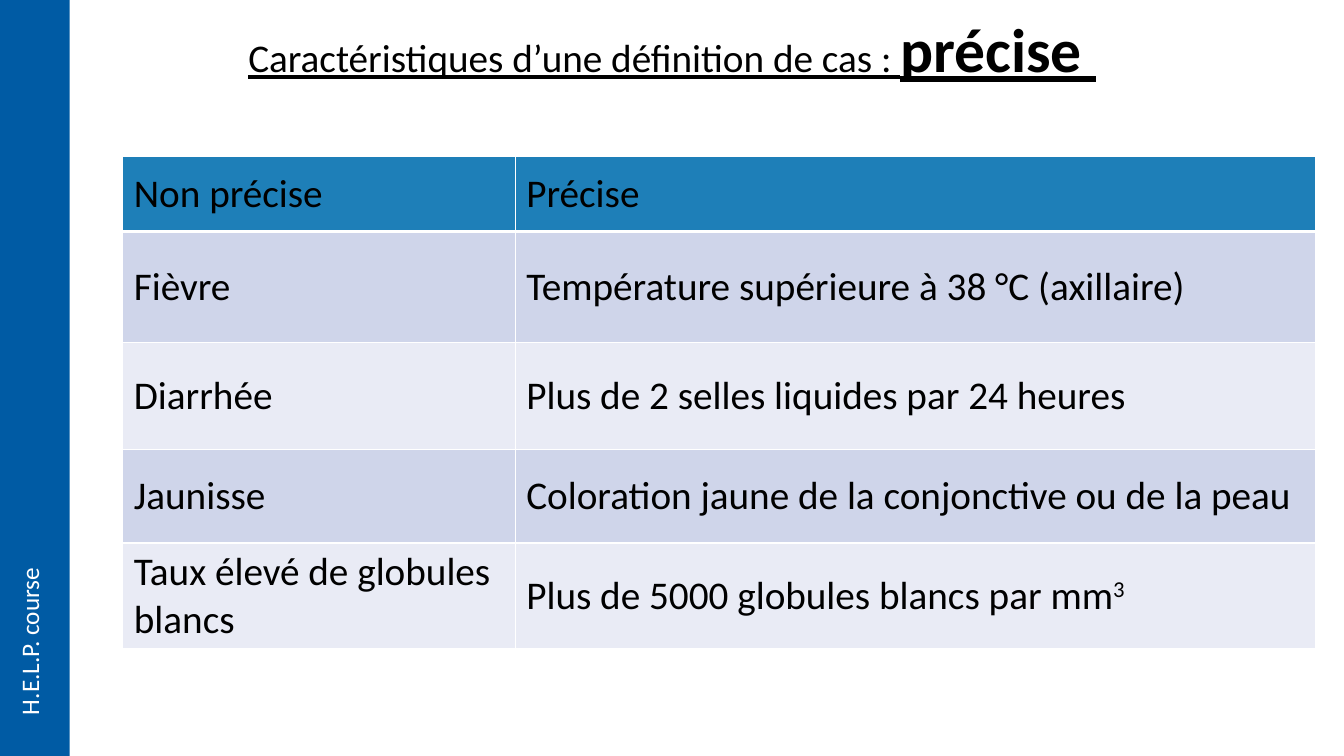
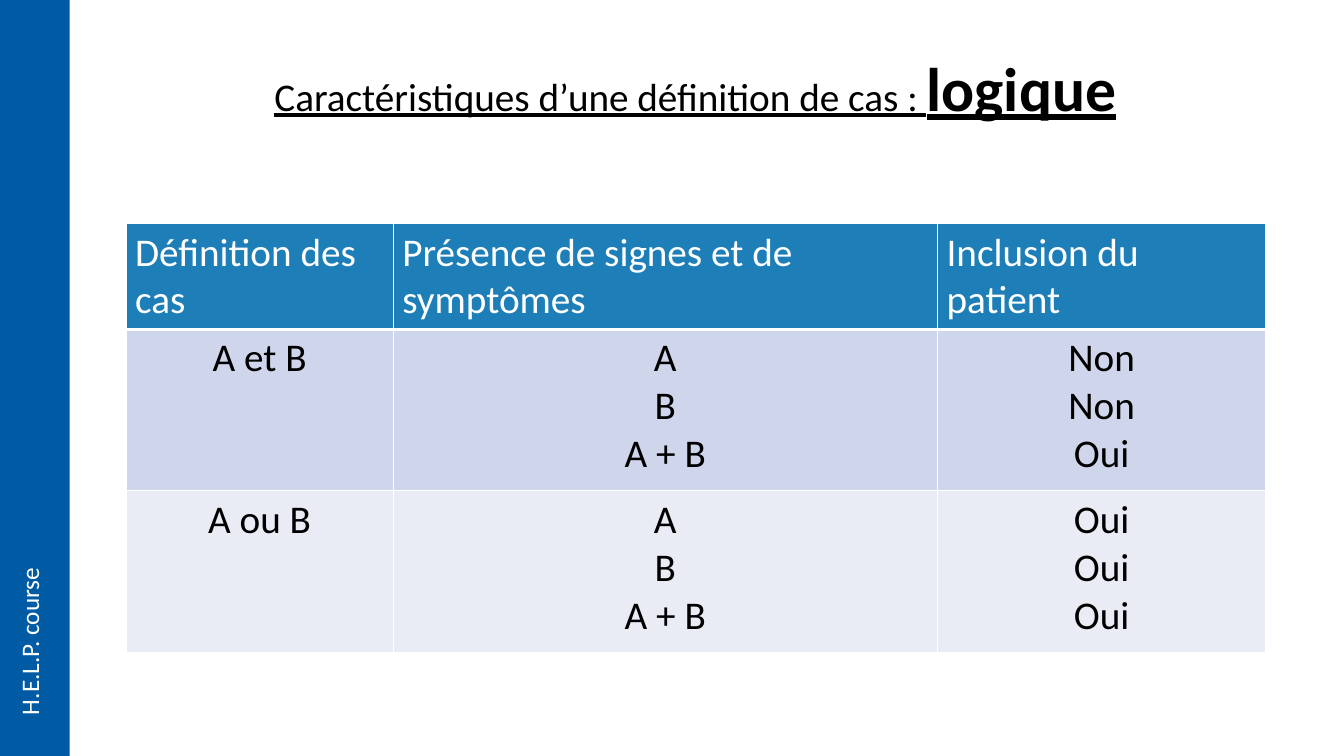
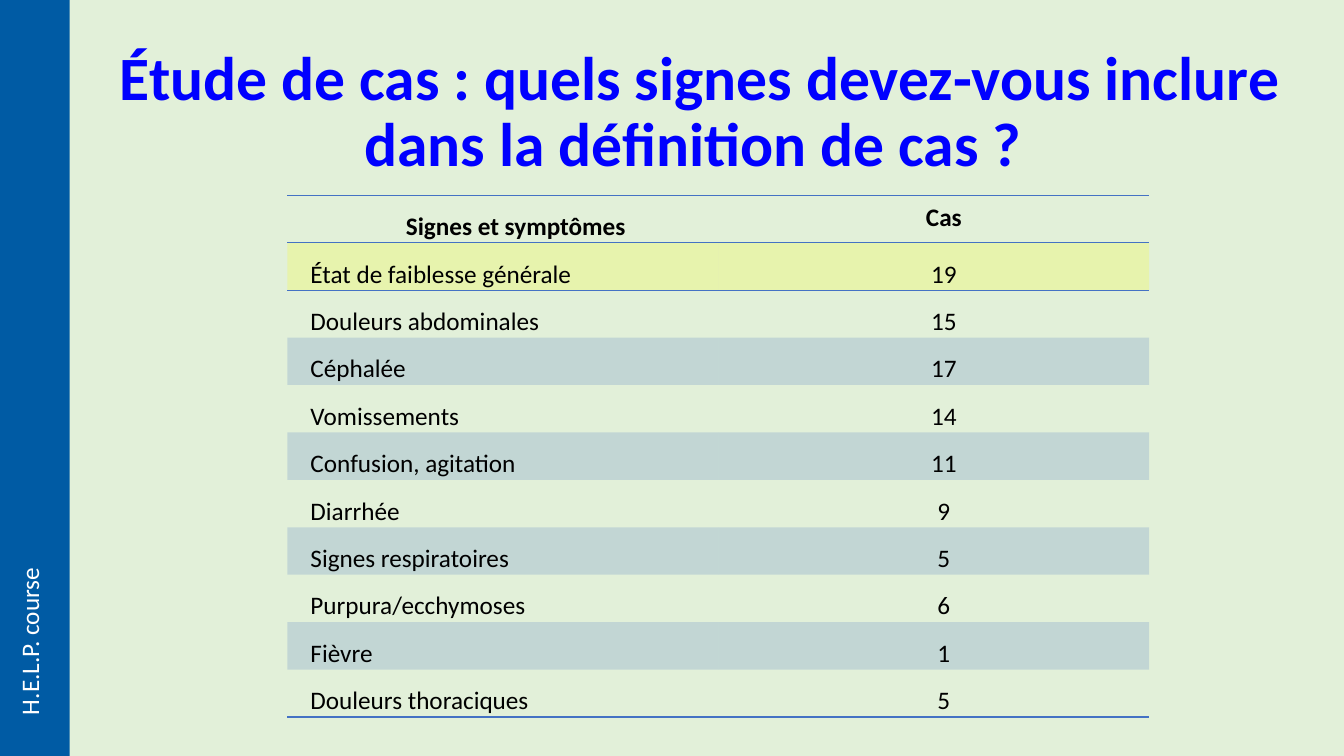
from dataclasses import dataclass, replace
from typing import NamedTuple, Optional

from lxml import etree
from pptx import Presentation
from pptx.dml.color import RGBColor
from pptx.enum import shapes, text
from pptx.oxml import ns
from pptx.util import Pt

# Shared look
FONT = "Calibri"
BLACK = RGBColor(0x00, 0x00, 0x00)
WHITE = RGBColor(0xFF, 0xFF, 0xFF)
BAND_BLUE = RGBColor(0x00, 0x5B, 0xA4)
HEADER_BLUE = RGBColor(0x1E, 0x7F, 0xB8)
ROW_DARK = RGBColor(0xCF, 0xD5, 0xEA)
ROW_LIGHT = RGBColor(0xE9, 0xEB, 0xF5)
PALE_GREEN = RGBColor(0xE2, 0xF0, 0xD9)
TITLE_BLUE = RGBColor(0x00, 0x00, 0xFF)
ACCENT = RGBColor(0x44, 0x72, 0xC4)
YELLOW = RGBColor(0xFF, 0xFF, 0x00)

SLIDE_W, SLIDE_H = 960, 540
BAND_W = 49.7
TITLE_H = 104.4
PLAIN_TABLE = "{2D5ABB26-0587-4C30-8999-92F81FD0307C}"
LEFT, CENTER = text.PP_ALIGN.LEFT, text.PP_ALIGN.CENTER
TOP, MIDDLE, BOTTOM = (text.MSO_ANCHOR.TOP, text.MSO_ANCHOR.MIDDLE,
                       text.MSO_ANCHOR.BOTTOM)


class TitlePart(NamedTuple):
    words: str
    size: float
    bold: bool


class Tint(NamedTuple):
    color: RGBColor
    opacity: int = 100


class Edge(NamedTuple):
    color: RGBColor
    width: float


@dataclass(frozen=True)
class CellStyle:
    size: float = 28
    color: RGBColor = BLACK
    bold: bool = False
    align: text.PP_ALIGN = LEFT
    anchor: text.MSO_ANCHOR = TOP
    insets: tuple[float, float, float, float] = (6.6, 3.6, 6.6, 3.6)
    spacing: float = 1
    indent: float = 0


@dataclass(frozen=True)
class TableSpec:
    left: float
    top: float
    widths: list[float]
    heights: list[float]
    rows: list[tuple[str, ...]]     # a line break starts a paragraph, ^ a superscript
    header: list[CellStyle]         # one style per column
    body: list[CellStyle]
    tints: list[Optional[Tint]]     # one per row
    gridded: bool = True


@dataclass(frozen=True)
class SlideSpec:
    title: list[TitlePart]
    title_left: float
    title_top: float
    title_width: float
    table: TableSpec
    title_color: RGBColor = BLACK
    underlined: bool = True
    background: RGBColor = WHITE


def brand_layout(slide, layout) -> None:
    """Build the side band and course label, then move them to the layout."""
    band = slide.shapes.add_shape(shapes.MSO_SHAPE.RECTANGLE,
                                  0, 0, Pt(BAND_W), Pt(SLIDE_H))
    band.shadow.inherit = False
    band.fill.solid()
    band.fill.fore_color.rgb = BAND_BLUE
    band.line.fill.background()

    course = slide.shapes.add_textbox(Pt(6.5), Pt(404), Pt(36), Pt(113.8))
    frame = course.text_frame
    frame.word_wrap = False
    frame.auto_size = text.MSO_AUTO_SIZE.SHAPE_TO_FIT_TEXT
    course.element.txBody.find(ns.qn("a:bodyPr")).set("vert", "vert270")
    label = frame.paragraphs[0]
    label.text = "H.E.L.P. course"
    label.font.name, label.font.size = FONT, Pt(18)
    label.font.color.rgb = WHITE

    for part in (band, course):
        layout.shapes.element.append(part.element)


def write_title(slide, spec: SlideSpec) -> None:
    title = slide.shapes.title
    title.left, title.top = Pt(spec.title_left), Pt(spec.title_top)
    title.width, title.height = Pt(spec.title_width), Pt(TITLE_H)
    frame = title.text_frame
    frame.word_wrap = True
    frame.auto_size = text.MSO_AUTO_SIZE.NONE
    frame.vertical_anchor = MIDDLE
    line = frame.paragraphs[0]
    line.alignment, line.line_spacing = CENTER, 0.9
    line.font.name, line.font.underline = FONT, spec.underlined
    line.font.color.rgb = spec.title_color
    for part in spec.title:
        run = line.add_run()
        run.text = part.words
        run.font.size, run.font.bold = Pt(part.size), part.bold


def cell_edges(spec: TableSpec, row: int) -> dict[str, Edge]:
    if spec.gridded:
        edges = {side: Edge(WHITE, 1) for side in "LRTB"}
        if row == 0:
            edges["B"] = Edge(WHITE, 3)
        return edges
    rule = Edge(ACCENT, 1)
    if row == 0:
        return {"T": rule, "B": rule}
    if row == 1:
        return {"T": rule}
    return {"B": rule} if row == len(spec.rows) - 1 else {}


def draw_edges(cell, edges: dict[str, Edge]) -> None:
    properties = cell._tc.get_or_add_tcPr()
    for side, edge in edges.items():
        line = etree.SubElement(properties, ns.qn(f"a:ln{side}"),
                                w=str(Pt(edge.width)))
        fill = etree.SubElement(line, ns.qn("a:solidFill"))
        etree.SubElement(fill, ns.qn("a:srgbClr"), val=str(edge.color))


def fill_cell(cell, tint: Optional[Tint]) -> None:
    if tint is None:
        cell.fill.background()
        return
    cell.fill.solid()
    cell.fill.fore_color.rgb = tint.color
    if tint.opacity < 100:
        color = cell._tc.tcPr.find(f"{ns.qn('a:solidFill')}/{ns.qn('a:srgbClr')}")
        etree.SubElement(color, ns.qn("a:alpha"), val=str(tint.opacity * 1000))


def write_cell(cell, words: str, style: CellStyle) -> None:
    (cell.margin_left, cell.margin_top,
     cell.margin_right, cell.margin_bottom) = map(Pt, style.insets)
    cell.vertical_anchor = style.anchor
    frame = cell.text_frame
    for index, line in enumerate(words.split("\n")):
        paragraph = frame.add_paragraph() if index else frame.paragraphs[0]
        paragraph.alignment = style.align
        paragraph.line_spacing = style.spacing
        if style.indent:
            paragraph._p.get_or_add_pPr().set("marL", str(Pt(style.indent)))
        font = paragraph.font
        font.name, font.size, font.bold = FONT, Pt(style.size), style.bold
        font.color.rgb = style.color
        base, _, exponent = line.partition("^")
        paragraph.add_run().text = base
        if exponent:
            raised = paragraph.add_run()
            raised.text = exponent
            raised._r.get_or_add_rPr().set("baseline", "30000")


def draw_table(slide, spec: TableSpec) -> None:
    frame = slide.shapes.add_table(
        len(spec.heights), len(spec.widths), Pt(spec.left), Pt(spec.top),
        Pt(sum(spec.widths)), Pt(sum(spec.heights)))
    table = frame.table
    table.first_row = table.horz_banding = False
    table._tbl.tblPr.find(ns.qn("a:tableStyleId")).text = PLAIN_TABLE
    for column, width in zip(table.columns, spec.widths):
        column.width = Pt(width)
    for row, height in zip(table.rows, spec.heights):
        row.height = Pt(height)
    for r, entries in enumerate(spec.rows):
        styles = spec.body if r else spec.header
        for c, words in enumerate(entries):
            cell = table.cell(r, c)
            write_cell(cell, words, styles[c])
            draw_edges(cell, cell_edges(spec, r))
            fill_cell(cell, spec.tints[r])


# Slide contents
CASE_TITLE = TitlePart("Caractéristiques d’une définition de cas : ", 28, False)
HEADER, DARK, LIGHT = Tint(HEADER_BLUE), Tint(ROW_DARK), Tint(ROW_LIGHT)
BAND, HIGHLIGHT = Tint(ACCENT, 20), Tint(YELLOW, 20)

PRECISE = CellStyle(anchor=MIDDLE, insets=(7.9, 3.6, 7.9, 3.6))
LOGIC_BODY = CellStyle(align=CENTER)
LOGIC_HEADER = CellStyle(color=WHITE)
SIGN = CellStyle(size=18, insets=(2.2, 0.7, 2.2, 0), spacing=1.5, indent=14.4)
COUNT = replace(SIGN, align=CENTER)
SIGN_HEADER = replace(COUNT, bold=True, anchor=BOTTOM)
COUNT_HEADER = replace(COUNT, bold=True, spacing=1.15,
                       insets=(2.9, 2.2, 2.9, 2.2))

SLIDES = [
    SlideSpec(
        title=[CASE_TITLE, TitlePart("précise", 44, True), TitlePart(" ", 44, False)],
        title_left=66.2, title_top=-14.4, title_width=828,
        table=TableSpec(
            left=87.8, top=111.4, widths=[280.3, 571.8],
            heights=[54, 79.2, 76.3, 67, 67.7],
            rows=[
                ("Non précise", "Précise"),
                ("Fièvre", "Température supérieure à 38 °C (axillaire)"),
                ("Diarrhée", "Plus de 2 selles liquides par 24 heures"),
                ("Jaunisse", "Coloration jaune de la conjonctive ou de la peau"),
                ("Taux élevé de globules blancs",
                 "Plus de 5000 globules blancs par mm^3"),
            ],
            header=[PRECISE] * 2, body=[PRECISE] * 2,
            tints=[HEADER, DARK, LIGHT, DARK, LIGHT])),
    SlideSpec(
        title=[CASE_TITLE, TitlePart("logique", 44, True)],
        title_left=82.8, title_top=13, title_width=828,
        table=TableSpec(
            left=90, top=159.8, widths=[190.8, 388.8, 234.7],
            heights=[51.8, 115.2, 115.2],
            rows=[
                ("Définition des cas", "Présence de signes et de symptômes",
                 "Inclusion du patient"),
                ("A et B", "A\nB\nA + B", "Non\nNon\nOui"),
                ("A ou B", "A\nB\nA + B", "Oui\nOui\nOui"),
            ],
            header=[LOGIC_HEADER] * 3, body=[LOGIC_BODY] * 3,
            tints=[HEADER, DARK, LIGHT])),
    SlideSpec(
        title=[TitlePart("Étude de cas : quels signes devez-vous inclure "
                         "dans la définition de cas ? ", 44, True)],
        title_left=BAND_W, title_top=28.8, title_width=901.4,
        title_color=TITLE_BLUE, underlined=False, background=PALE_GREEN,
        table=TableSpec(
            left=205.2, top=139.5, widths=[308, 307.6], heights=[33.9] * 11,
            rows=[
                (" Signes et symptômes", "Cas"),
                ("État de faiblesse générale", "19"),
                ("Douleurs abdominales", "15"),
                ("Céphalée", "17"),
                ("Vomissements", "14"),
                ("Confusion, agitation", "11"),
                ("Diarrhée", "9"),
                ("Signes respiratoires", "5"),
                ("Purpura/ecchymoses", "6"),
                ("Fièvre", "1"),
                ("Douleurs thoraciques", "5"),
            ],
            header=[SIGN_HEADER, COUNT_HEADER], body=[SIGN, COUNT],
            tints=[None, HIGHLIGHT] + [None, BAND] * 4 + [None],
            gridded=False)),
]


def main() -> None:
    deck = Presentation()
    deck.slide_width, deck.slide_height = Pt(SLIDE_W), Pt(SLIDE_H)
    layout = deck.slide_layouts[5]
    pages = [deck.slides.add_slide(layout) for _ in SLIDES]
    brand_layout(pages[0], layout)
    for page, spec in zip(pages, SLIDES):
        page.background.fill.solid()
        page.background.fill.fore_color.rgb = spec.background
        write_title(page, spec)
        draw_table(page, spec.table)
    deck.save("out.pptx")


if __name__ == "__main__":
    main()
